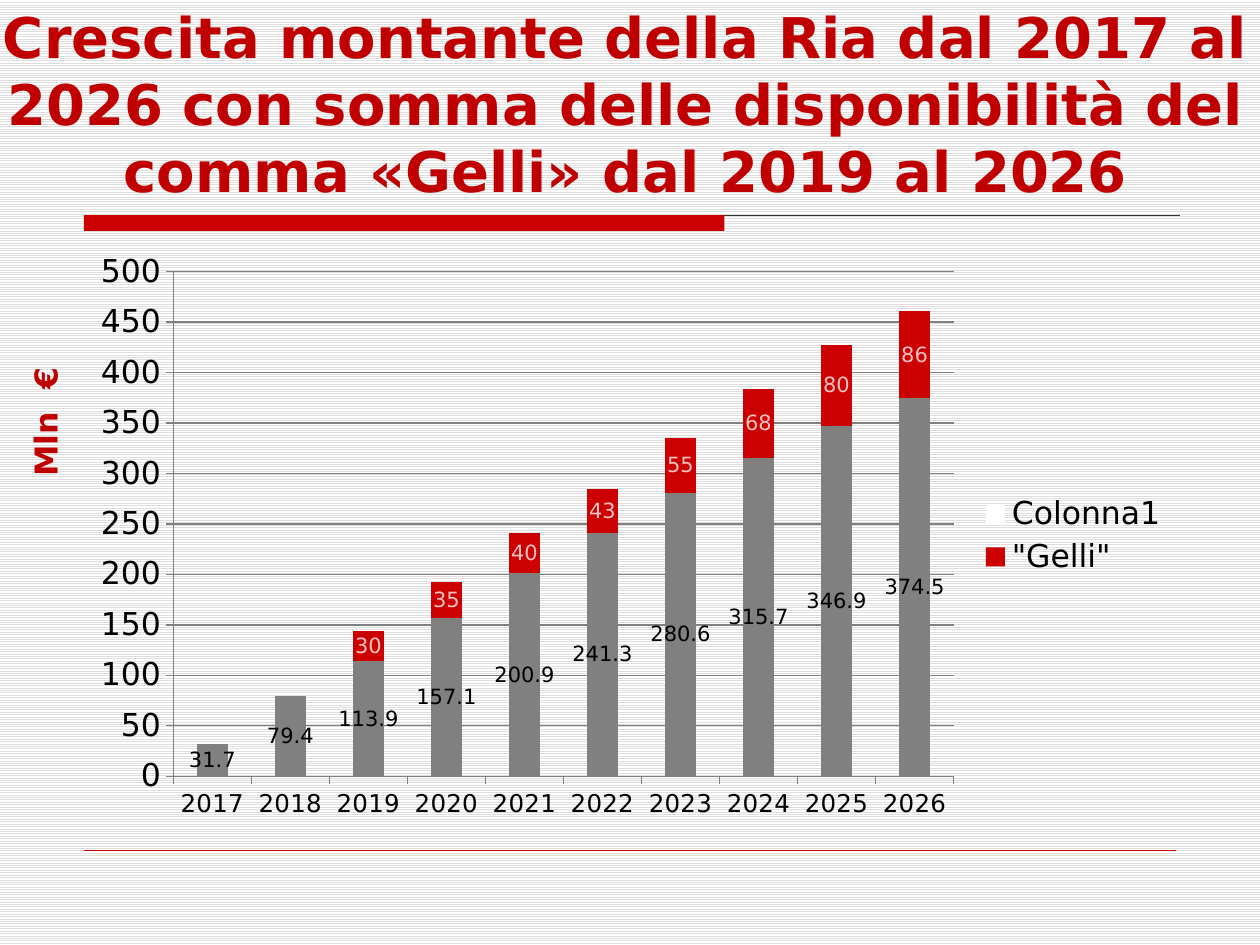
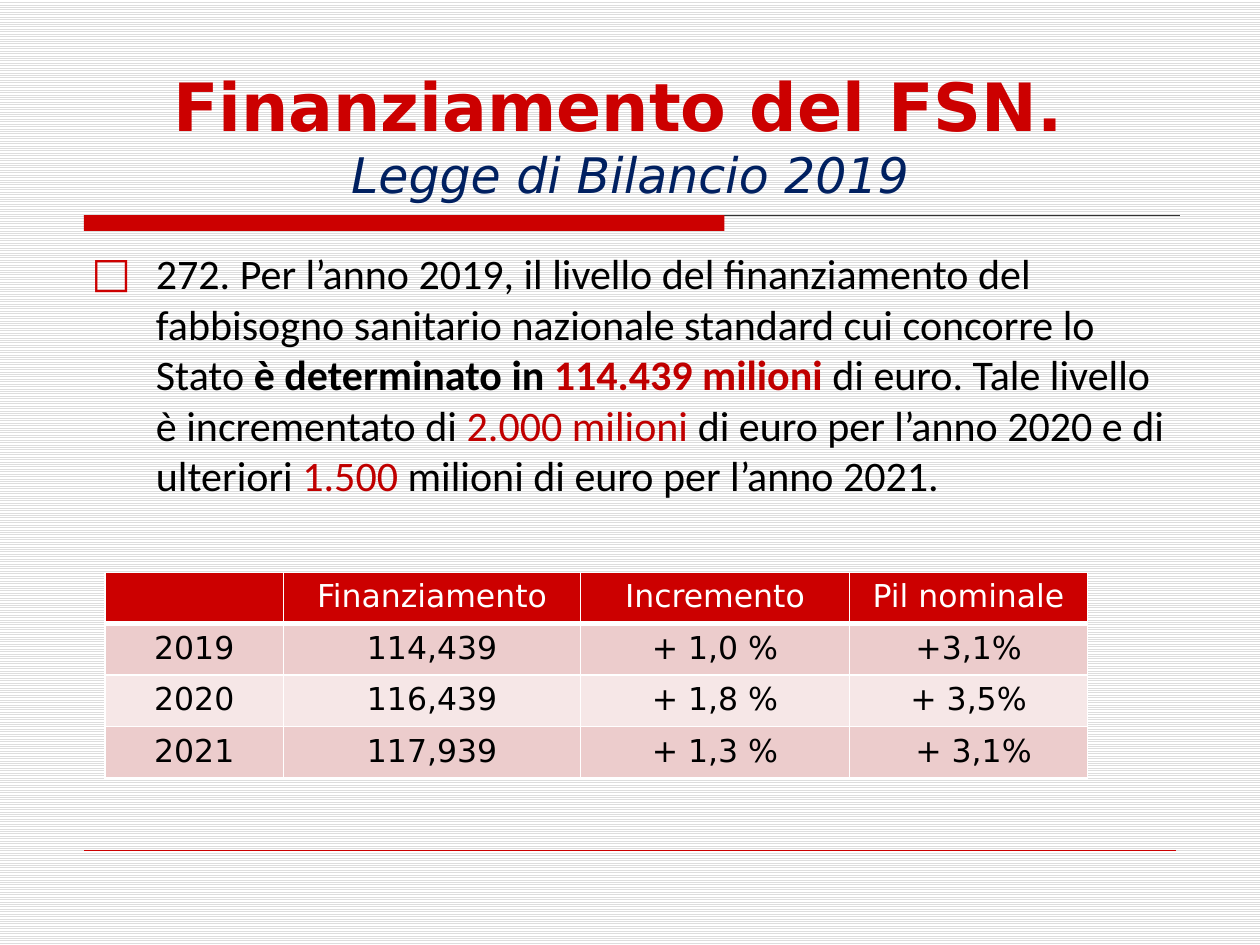
from dataclasses import dataclass

from lxml import etree
from pptx import Presentation
from pptx import util as u
from pptx.chart.data import CategoryChartData
from pptx.dml.color import RGBColor
from pptx.enum import chart as charts, dml, shapes, text
from pptx.oxml import ns

COLORS = {
    "red": "CC0000", "dark_red": "C00000", "navy": "002060", "black": "000000",
    "white": "FFFFFF", "stripe": "DDDDDD", "rule": "333333", "gray": "808080",
    "pink": "FFC2C2", "row_dark": "ECCCCC", "row_light": "F6E7E7",
}
SANS, BODY = "DejaVu Sans", "Calibri"
TITLE_ONLY, TITLE_AND_BODY = 5, 1
CELL = u.Inches(10) // 120  # the slide is a grid of 120 columns by 90 rows


def grid(count):
    return u.Emu(round(count * CELL))


@dataclass
class Box:
    """A region in grid columns and rows."""
    left: float
    top: float
    width: float
    height: float

    def emu(self):
        return [grid(n) for n in (self.left, self.top, self.width, self.height)]

    def place(self, shape):
        shape.left, shape.top, shape.width, shape.height = self.emu()


WIDE_TITLE = Box(-1.4, 4, 122, 16)
TITLE = Box(7.5, 4, 105, 16)
CONTENT = Box(7.5, 23, 105, 56)
BAND = Box(8, 20.5, 104.4, 1.5)
FOOTER = Box(8, 81, 104, 0)
TABLE = Box(10, 54.5, 93.6, 19.6)


def rgb(name):
    return RGBColor.from_string(COLORS[name])


def style_font(font, color=None, **formats):
    for name, value in formats.items():
        setattr(font, name, value)
    if color:
        font.color.rgb = rgb(color)


def add_runs(paragraph, runs, **shared):
    """Add (words, formats) pairs; each run's formats extend the shared ones."""
    for words, formats in runs:
        if words == "\n":
            paragraph.add_line_break()
            continue
        run = paragraph.add_run()
        run.text = words
        style_font(run.font, **{**shared, **formats})


def add_rule(slide, left, top, width, color, points):
    line = slide.shapes.add_connector(
        shapes.MSO_CONNECTOR.STRAIGHT, grid(left), grid(top), grid(left + width), grid(top))
    line.line.color.rgb = rgb(color)
    line.line.width = u.Pt(points)
    etree.SubElement(line._element.spPr, ns.qn("a:effectLst"))


def add_frame(slide):
    """Draw the band under the title and the footer line."""
    add_rule(slide, BAND.left, BAND.top, BAND.width, "rule", 0.75)
    bar = slide.shapes.add_shape(
        shapes.MSO_SHAPE.RECTANGLE, *Box(BAND.left, BAND.top, 61, BAND.height).emu())
    bar.shadow.inherit = False
    bar.fill.solid()
    bar.fill.fore_color.rgb = rgb("red")
    bar.line.fill.background()
    add_rule(slide, FOOTER.left, FOOTER.top, FOOTER.width, "red", 0.25)


def add_slide(presentation, layout, title_box, title_runs):
    slide = presentation.slides.add_slide(presentation.slide_layouts[layout])
    add_frame(slide)
    title = slide.shapes.title
    title_box.place(title)
    frame = title.text_frame
    frame.auto_size = text.MSO_AUTO_SIZE.NONE
    frame.vertical_anchor = text.MSO_ANCHOR.BOTTOM
    frame.paragraphs[0].alignment = text.PP_ALIGN.CENTER
    add_runs(frame.paragraphs[0], title_runs, name=SANS)
    return slide


def style_axis(axis, size):
    axis.major_tick_mark = charts.XL_TICK_MARK.OUTSIDE
    axis.minor_tick_mark = charts.XL_TICK_MARK.NONE
    axis.tick_labels.font.size = u.Pt(size)
    axis.format.line.color.rgb = rgb("gray")


def add_growth_chart(slide, box):
    base = [31.7, 79.4, 113.9, 157.1, 200.9, 241.3, 280.6, 315.7, 346.9, 374.5]
    series_list = [
        ("Series 1", base, "gray", "black"),
        ('"Gelli"', [None, None, 30, 35, 40, 43, 55, 68, 80, 86], "red", "pink"),
        ("Colonna1", [None] * len(base), "white", None),
    ]
    data = CategoryChartData()
    data.categories = [str(year) for year in range(2017, 2027)]
    for name, values, *_ in series_list:
        data.add_series(name, values)
    chart = slide.shapes.add_chart(
        charts.XL_CHART_TYPE.COLUMN_STACKED, *box.emu(), data).chart
    style_font(chart.font, "black", name=SANS, size=u.Pt(18))
    chart.has_title = False

    plot = chart.plots[0]
    plot.gap_width, plot.overlap, plot.vary_by_categories = 150, 100, False
    for series, (_, _, fill, label) in zip(plot.series, series_list):
        series.format.fill.solid()
        series.format.fill.fore_color.rgb = rgb(fill)
        if label:
            series.data_labels.show_value = True
            style_font(series.data_labels.font, label, name=SANS, size=u.Pt(12))

    style_axis(chart.category_axis, 14)
    style_axis(chart.value_axis, 18)
    chart.value_axis.minimum_scale, chart.value_axis.maximum_scale = 0, 500
    chart.value_axis.major_unit = 50
    chart.value_axis.major_gridlines.format.line.color.rgb = rgb("gray")

    chart.has_legend = True
    chart.legend.position = charts.XL_LEGEND_POSITION.RIGHT
    chart.legend.include_in_layout = False
    entry = etree.Element(ns.qn("c:legendEntry"))
    for tag, value in (("c:idx", "0"), ("c:delete", "1")):
        etree.SubElement(entry, ns.qn(tag)).set("val", value)
    chart.legend._element.insert(1, entry)


def add_unit_label(slide, box):
    label = slide.shapes.add_textbox(*box.emu())
    label.rotation = 270
    label.text_frame.word_wrap = True
    add_runs(label.text_frame.paragraphs[0], [("Mln  €", {})],
             color="dark_red", name=SANS, size=u.Pt(18), bold=True)


def add_law_text(slide, box):
    body = slide.placeholders[1]
    box.place(body)
    body.text_frame.auto_size = text.MSO_AUTO_SIZE.NONE
    paragraph = body.text_frame.paragraphs[0]
    properties = paragraph._p.get_or_add_pPr()
    indent = grid(6.15)
    properties.set("marL", str(indent))
    properties.set("indent", str(-indent))
    bullet_color = etree.SubElement(properties, ns.qn("a:buClr"))
    etree.SubElement(bullet_color, ns.qn("a:srgbClr")).set("val", COLORS["red"])
    etree.SubElement(properties, ns.qn("a:buFont")).set("typeface", SANS)
    etree.SubElement(properties, ns.qn("a:buChar")).set("char", "□")
    red = {"color": "dark_red"}
    add_runs(paragraph, [
        ("272. Per l’anno 2019, il livello del finanziamento del fabbisogno sanitario "
         "nazionale standard cui concorre lo Stato ", {}),
        ("è determinato in ", {"bold": True}),
        ("114.439 milioni ", {**red, "bold": True}),
        ("di euro. Tale livello è incrementato di ", {}),
        ("2.000 milioni ", red),
        ("di euro per l’anno 2020 e di ulteriori ", {}),
        ("1.500 ", red),
        ("milioni di euro per l’anno 2021.", {}),
    ], color="black", name=BODY, size=u.Pt(24), bold=False)


def add_borders(cell, bottom):
    properties = cell._tc.get_or_add_tcPr()
    widths = {"L": 1, "R": 1, "T": 1, "B": bottom}
    for position, (side, points) in enumerate(widths.items()):
        line = etree.Element(ns.qn(f"a:ln{side}"), w=str(u.Pt(points)))
        fill = etree.SubElement(line, ns.qn("a:solidFill"))
        etree.SubElement(fill, ns.qn("a:srgbClr")).set("val", COLORS["white"])
        properties.insert(position, line)


def add_funding_table(slide, box):
    rows = [
        ("", "Finanziamento", "Incremento", "Pil nominale"),
        ("2019", "114,439", "+ 1,0 %", "+3,1%"),
        ("2020", "116,439", "+ 1,8 %", "+ 3,5%"),
        ("2021", "117,939", "+ 1,3 %", " + 3,1%"),
    ]
    table = slide.shapes.add_table(len(rows), len(rows[0]), *box.emu()).table
    for column, width in zip(table.columns, (17, 28.3, 25.6, 22.7)):
        column.width = grid(width)
    for index, row in enumerate(rows):
        table.rows[index].height = grid(box.height / len(rows))
        header = index == 0
        fill = "red" if header else ("row_light", "row_dark")[index % 2]
        for cell, words in zip(table.rows[index].cells, row):
            cell.fill.solid()
            cell.fill.fore_color.rgb = rgb(fill)
            add_borders(cell, 3 if header else 1)
            paragraph = cell.text_frame.paragraphs[0]
            paragraph.alignment = text.PP_ALIGN.CENTER
            if words:
                add_runs(paragraph, [(words, {})], name=SANS, size=u.Pt(18), bold=False,
                         color="white" if header else "black")


def set_background(master):
    fill = master.background.fill
    fill.patterned()
    fill.pattern = dml.MSO_PATTERN.LIGHT_HORIZONTAL
    fill.fore_color.rgb = rgb("stripe")
    fill.back_color.rgb = rgb("white")


def build_growth_slide(presentation):
    slide = add_slide(presentation, TITLE_ONLY, WIDE_TITLE, [
        ("Crescita montante della Ria dal 2017 al 2026 con somma delle disponibilità "
         "del comma «Gelli» dal 2019 al 2026",
         {"color": "dark_red", "size": u.Pt(32), "bold": True}),
    ])
    add_growth_chart(slide, CONTENT)
    add_unit_label(slide, Box(-0.25, 35.9, 12.8, 8.5))


def build_funding_slide(presentation):
    slide = add_slide(presentation, TITLE_AND_BODY, TITLE, [
        ("Finanziamento del FSN. ", {"color": "red", "size": u.Pt(38), "bold": True}),
        ("\n", {}),
        ("Legge di Bilancio 2019",
         {"color": "navy", "size": u.Pt(28), "bold": False, "italic": True}),
    ])
    add_law_text(slide, CONTENT)
    add_funding_table(slide, TABLE)


def main():
    presentation = Presentation()
    presentation.slide_width, presentation.slide_height = grid(120), grid(90)
    set_background(presentation.slide_master)
    build_growth_slide(presentation)
    build_funding_slide(presentation)
    presentation.save("out.pptx")


if __name__ == "__main__":
    main()
